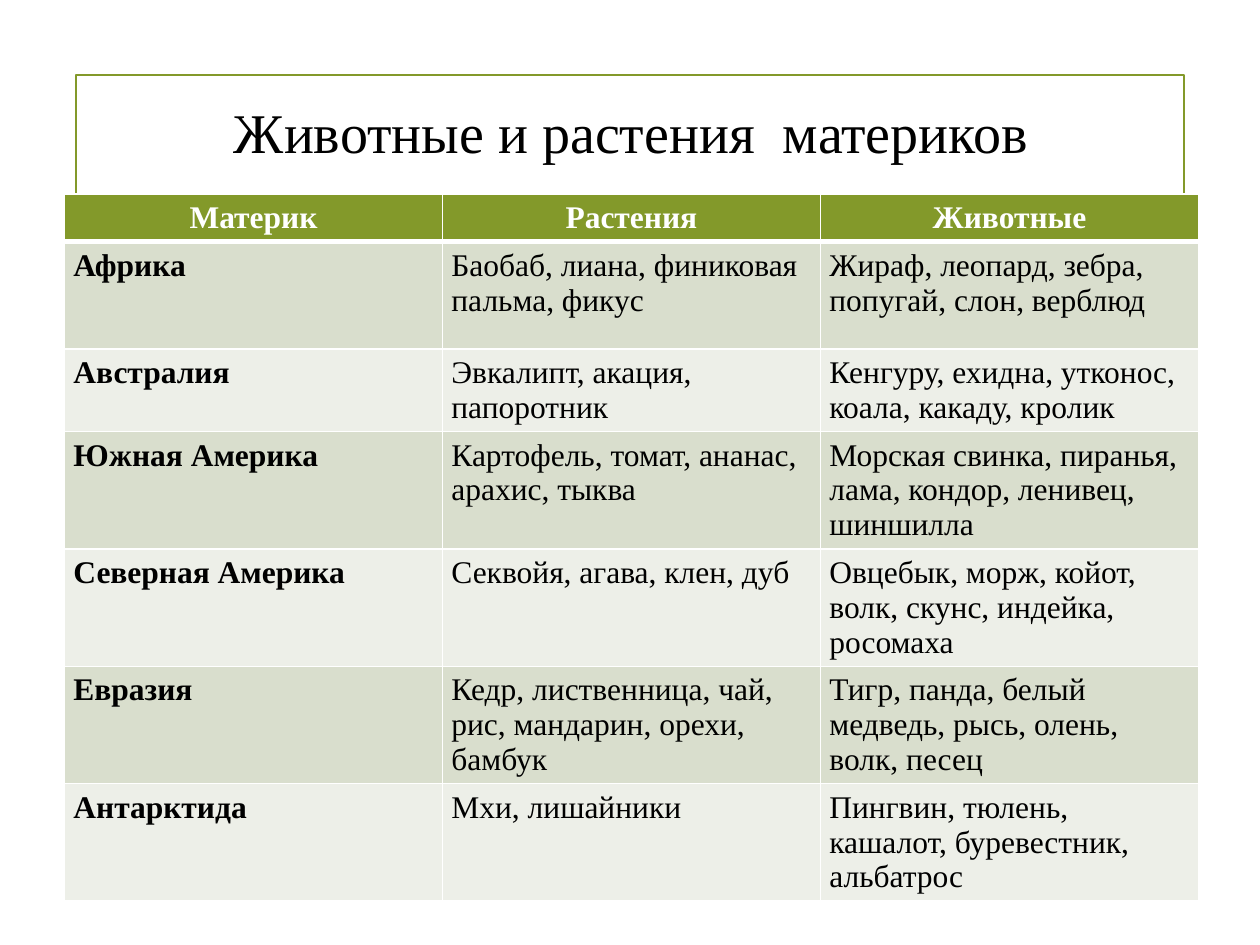
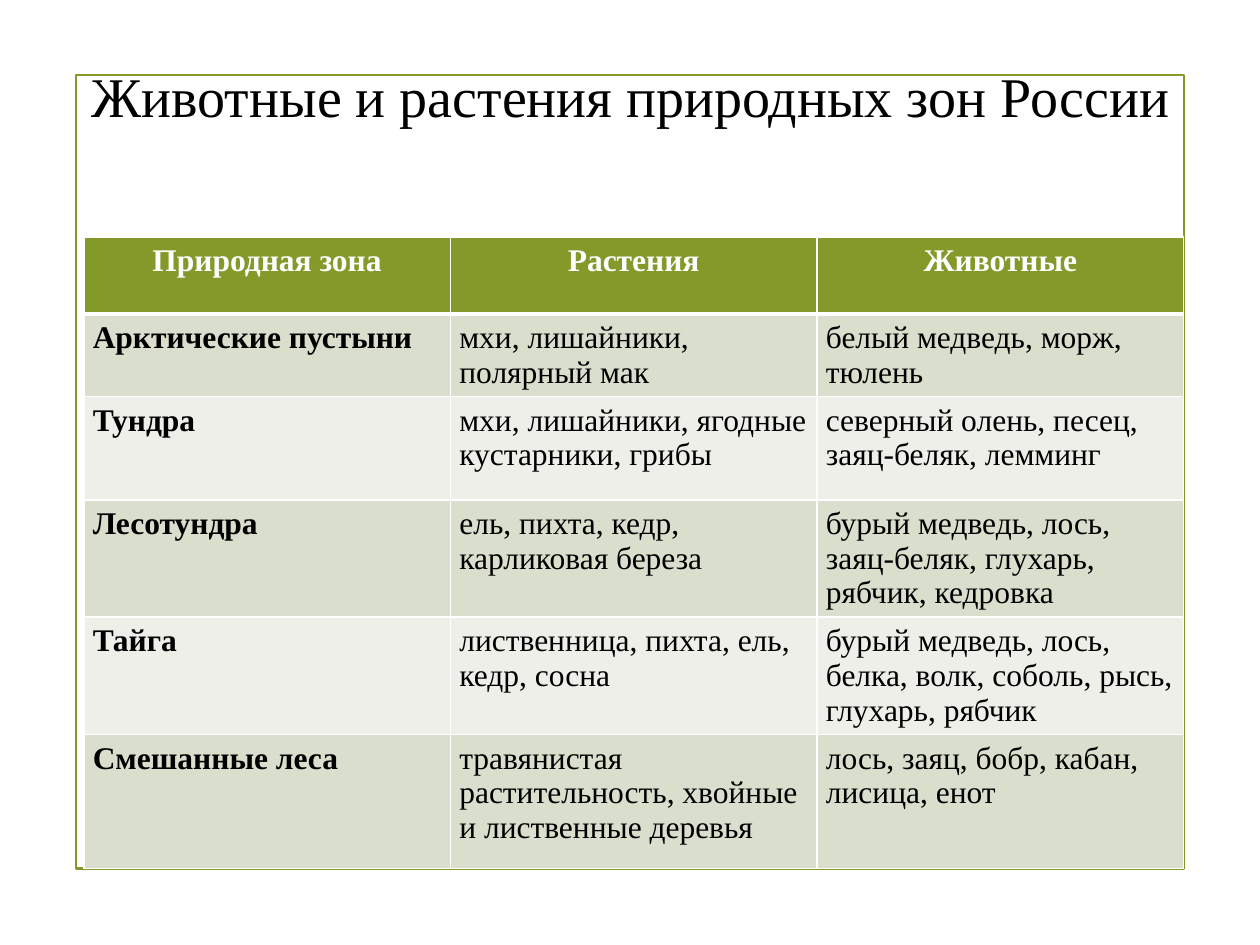
from dataclasses import dataclass

import lxml.etree
import pptx
import pptx.dml.color
import pptx.enum.shapes
import pptx.enum.text
import pptx.oxml.ns
import pptx.presentation
import pptx.slide
import pptx.table
import pptx.util

Cm = pptx.util.Cm
Pt = pptx.util.Pt
Align = pptx.enum.text.PP_ALIGN
Anchor = pptx.enum.text.MSO_ANCHOR


# Theme
@dataclass(frozen=True)
class Theme:
    font: str = "Times New Roman"
    green: str = "83992A"
    bands: tuple[str, str] = ("D9DECD", "EDEFE8")
    dark: str = "000000"
    light: str = "FFFFFF"
    title: int = 32
    body: int = 18
    pitch: float = 19.9
    frame: float = 1.25
    thin: int = 1
    thick: int = 3


THEME = Theme()


@dataclass(frozen=True)
class Page:
    title: str
    top: float
    anchor: Anchor
    left: float
    start: float
    width: float
    heights: tuple[float, ...]
    rows: tuple[tuple[str, str, str], ...]


# Content, with lengths in centimetres
PAGES = (
    Page(
        "Животные и растения  материков", 1.47, Anchor.MIDDLE,
        1.3, 3.91, 7.62, (0.95, 2.16, 1.65, 2.36, 2.36, 2.36, 2.36),
        (
            ("Материк", "Растения", "Животные"),
            ("Африка", "Баобаб, лиана, финиковая пальма, фикус",
             "Жираф, леопард, зебра, попугай, слон, верблюд"),
            ("Австралия", "Эвкалипт, акация, папоротник",
             "Кенгуру, ехидна, утконос, коала, какаду, кролик"),
            ("Южная Америка", "Картофель, томат, ананас,\nарахис, тыква",
             "Морская свинка, пиранья, лама, кондор, ленивец, шиншилла"),
            ("Северная Америка", "Секвойя, агава, клен, дуб",
             "Овцебык, морж, койот, волк, скунс, индейка, росомаха"),
            ("Евразия", "Кедр, лиственница, чай, рис, мандарин, орехи, бамбук",
             "Тигр, панда, белый медведь, рысь, олень, волк, песец"),
            ("Антарктида", "Мхи, лишайники",
             "Пингвин, тюлень, кашалот, буревестник, альбатрос"),
        ),
    ),
    Page(
        "Животные и растения природных зон России", 1.24, Anchor.TOP,
        1.69, 4.78, 7.39, (1.55, 1.65, 2.08, 2.36, 2.36, 2.7),
        (
            ("Природная зона", "Растения", "Животные"),
            ("Арктические пустыни", "мхи, лишайники, полярный мак",
             "белый медведь, морж, тюлень"),
            ("Тундра", "мхи, лишайники, ягодные кустарники, грибы",
             "северный олень, песец, заяц-беляк, лемминг"),
            ("Лесотундра", "ель, пихта, кедр, карликовая береза",
             "бурый медведь, лось, заяц-беляк, глухарь, рябчик, кедровка"),
            ("Тайга", "лиственница, пихта, ель, кедр, сосна",
             "бурый медведь, лось, белка, волк, соболь, рысь, глухарь, рябчик"),
            ("Смешанные леса",
             "травянистая растительность, хвойные и лиственные деревья",
             "лось, заяц, бобр, кабан, лисица, енот"),
        ),
    ),
)


def paint(color: str) -> pptx.dml.color.RGBColor:
    return pptx.dml.color.RGBColor.from_string(color)


def style(frame, size: int, color: str, bold: bool, align: Align) -> None:
    for para in frame.paragraphs:
        para.alignment = align
        para.font.name = THEME.font
        para.font.size = Pt(size)
        para.font.bold = bold
        para.font.color.rgb = paint(color)


# Frame and title
def add_frame(slide: pptx.slide.Slide) -> None:
    kind = pptx.enum.shapes.MSO_SHAPE.RECTANGLE
    box = slide.shapes.add_shape(kind, Cm(1.54), Cm(1.51), Cm(22.33), Cm(16))
    box.shadow.inherit = False
    box.fill.background()
    box.line.color.rgb = paint(THEME.green)
    box.line.width = Pt(THEME.frame)


def add_title(slide: pptx.slide.Slide, page: Page) -> None:
    box = slide.shapes.add_textbox(Cm(1.6), Cm(page.top), Cm(22.25), Cm(2.34))
    text = box.text_frame
    text.word_wrap = True
    text.vertical_anchor = page.anchor
    text.margin_left = text.margin_right = 0
    text.margin_top = text.margin_bottom = 0
    text.text = page.title
    style(text, THEME.title, THEME.dark, False, Align.CENTER)


# Table
def add_edges(cell, row: int) -> None:
    qn = pptx.oxml.ns.qn
    props = cell._tc.get_or_add_tcPr()
    heavy = {(0, "B"), (1, "T")}
    for side in "LRTB":
        width = THEME.thick if (row, side) in heavy else THEME.thin
        line = lxml.etree.SubElement(props, qn(f"a:ln{side}"), w=str(Pt(width)))
        fill = lxml.etree.SubElement(line, qn("a:solidFill"))
        lxml.etree.SubElement(fill, qn("a:srgbClr"), val=THEME.light)


def fill_cell(cell, text: str, row: int, col: int) -> None:
    head = row == 0
    cell.margin_left = cell.margin_right = Cm(0.18)
    cell.margin_top = cell.margin_bottom = Cm(0.13)
    add_edges(cell, row)
    cell.fill.solid()
    back = THEME.green if head else THEME.bands[(row - 1) % 2]
    cell.fill.fore_color.rgb = paint(back)
    cell.text_frame.text = text
    style(cell.text_frame, THEME.body, THEME.light if head else THEME.dark,
          head or col == 0, Align.CENTER if head else Align.LEFT)
    for para in cell.text_frame.paragraphs:
        para.line_spacing = Pt(THEME.pitch)


def add_grid(slide: pptx.slide.Slide, page: Page) -> None:
    count = len(page.rows[0])
    grid = slide.shapes.add_table(
        len(page.rows), count, Cm(page.left), Cm(page.start),
        Cm(page.width * count), Cm(sum(page.heights))).table
    for col in grid.columns:
        col.width = Cm(page.width)
    for row, (height, texts) in enumerate(zip(page.heights, page.rows)):
        grid.rows[row].height = Cm(height)
        for col, text in enumerate(texts):
            fill_cell(grid.cell(row, col), text, row, col)


def main() -> None:
    deck = pptx.Presentation()
    deck.slide_width, deck.slide_height = Cm(25.4), Cm(19.05)
    for page in PAGES:
        slide = deck.slides.add_slide(deck.slide_layouts[6])
        add_frame(slide)
        add_title(slide, page)
        add_grid(slide, page)
    deck.save("out.pptx")


if __name__ == "__main__":
    main()
